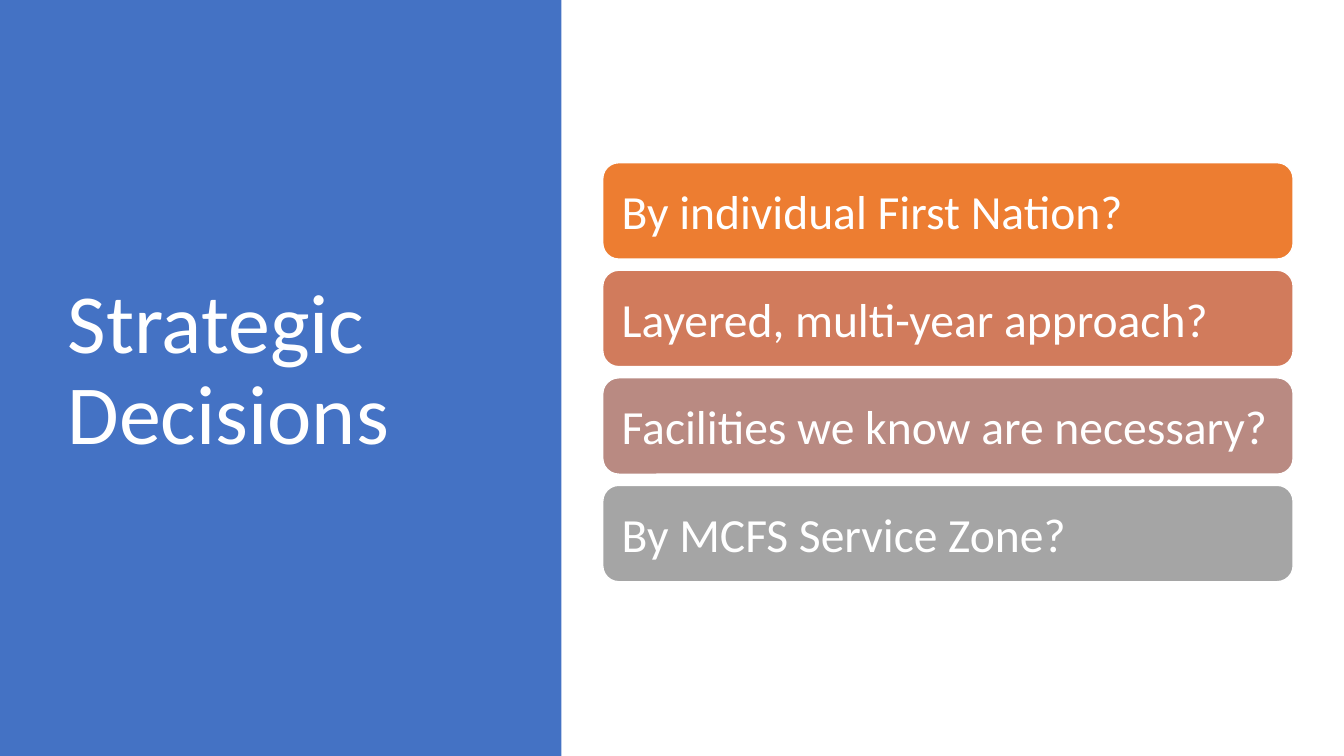
"""Build the Strategic Decisions slide: a title panel beside four option bars."""
from dataclasses import dataclass

from pptx import Presentation
from pptx.dml.color import RGBColor
from pptx.enum.shapes import MSO_SHAPE as Preset
from pptx.enum.text import MSO_ANCHOR as Anchor, MSO_AUTO_SIZE as AutoSize, PP_ALIGN as Align
from pptx.util import Cm, Pt


@dataclass(frozen=True)
class Theme:
    font: str = "Calibri"
    white: str = "FFFFFF"
    panel: str = "4472C4"
    options: tuple = ("ED7D31", "D17B5C", "B98A82", "A5A5A5")
    title_size: int = 60
    option_size: int = 34


theme = Theme()


def write(shape, text, *, size, inset, spacing=1.0):
    """Fill a shape with left-aligned, vertically centred white text."""
    frame = shape.text_frame
    frame.text = text
    frame.word_wrap = True
    frame.auto_size = AutoSize.NONE
    frame.vertical_anchor = Anchor.MIDDLE
    frame.margin_left = frame.margin_right = Cm(inset)
    frame.margin_top = frame.margin_bottom = Cm(inset)
    paragraph = frame.paragraphs[0]
    paragraph.alignment = Align.LEFT
    paragraph.line_spacing = spacing
    font = paragraph.runs[0].font
    font.name = theme.font
    font.size = Pt(size)
    font.color.rgb = RGBColor.from_string(theme.white)


def add_block(preset, left, top, width, height, color):
    """Add a flat, filled shape without an outline."""
    block = slide.shapes.add_shape(preset, Cm(left), Cm(top), Cm(width), Cm(height))
    block.shadow.inherit = False
    block.fill.solid()
    block.fill.fore_color.rgb = RGBColor.from_string(color)
    block.line.fill.background()
    return block


deck = Presentation()
deck.slide_width, deck.slide_height = Cm(33.87), Cm(19.05)
slide = deck.slides.add_slide(deck.slide_layouts[5])

panel = add_block(Preset.RECTANGLE, 0, 0, 14.15, 19.05, theme.panel)
title = slide.shapes.title
title._element.addprevious(panel._element)
title.left, title.top, title.width, title.height = Cm(1.45), Cm(1.73), Cm(10.57), Cm(15.29)
write(title, "Strategic Decisions", size=theme.title_size, inset=0.25, spacing=0.9)

questions = (
    "By individual First Nation?",
    "Layered, multi-year approach?",
    "Facilities we know are necessary?",
    "By MCFS Service Zone?",
)
first_top, pitch = 4.1, 2.71
for row, (question, color) in enumerate(zip(questions, theme.options)):
    option = add_block(Preset.ROUNDED_RECTANGLE, 15.19, first_top + row * pitch, 17.4, 2.43, color)
    option.line.color.rgb = RGBColor.from_string(theme.white)
    option.line.width = Pt(1)
    write(option, question, size=theme.option_size, inset=0.36)

deck.save("out.pptx")
